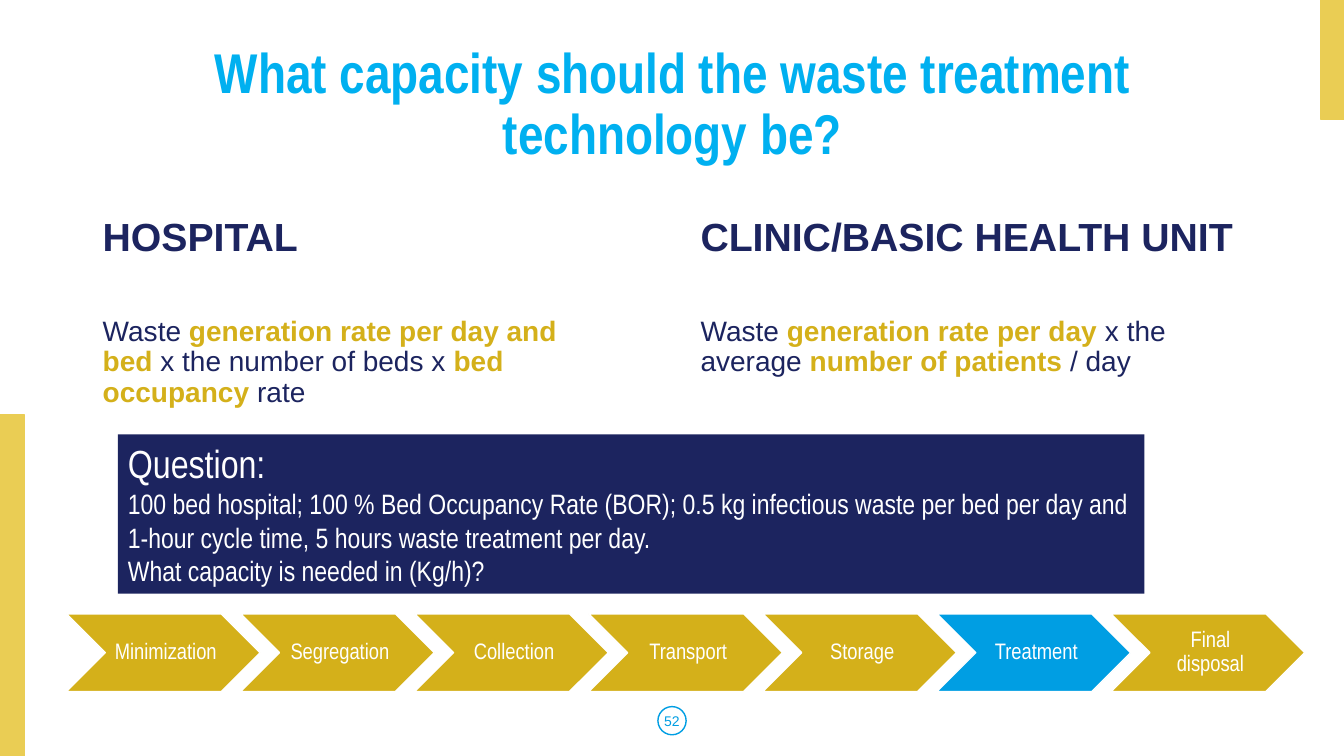
from pptx import Presentation
from pptx.dml.color import RGBColor
from pptx.enum.shapes import MSO_SHAPE
from pptx.enum.text import MSO_ANCHOR, PP_ALIGN
from pptx.util import Inches, Pt

COLORS = {
    "navy": "1C245F",
    "gold": "D4B01A",
    "pale_gold": "EACD54",
    "blue": "009EE3",
    "title_blue": "00B0F0",
    "white": "FFFFFF",
}
STEPS = ["Minimization", "Segregation", "Collection", "Transport",
         "Storage", "Treatment", "Final disposal"]
CURRENT_STEP = "Treatment"

# Each rule is a list of (text, emphasised) pieces
HOSPITAL_RULE = [
    ("Waste ", False), ("generation rate per day and bed ", True),
    ("x the number of beds x ", False), ("bed occupancy ", True), ("rate", False),
]
CLINIC_RULE = [
    ("Waste ", False), ("generation rate per day ", True),
    ("x the average ", False), ("number of patients ", True), ("/ day", False),
]
QUESTION_LINES = [
    ("Question:", 28),
    ("100 bed hospital; 100 % Bed Occupancy Rate (BOR); "
     "0.5 kg infectious waste per bed per day and", 20),
    ("1-hour cycle time, 5 hours waste treatment per day.", 20),
    ("What capacity is needed in (Kg/h)?", 20),
]


def color(name):
    return RGBColor.from_string(COLORS[name])


def add_run(paragraph, text, size, color_name, font="Arial Narrow", bold=False):
    run = paragraph.add_run()
    run.text = text
    run.font.name = font
    run.font.size = Pt(size)
    run.font.bold = bold
    run.font.color.rgb = color(color_name)


def add_box(slide, kind, box, fill=None, line=None):
    shape = slide.shapes.add_shape(kind, *map(Inches, box))
    shape.shadow.inherit = False
    if fill:
        shape.fill.solid()
        shape.fill.fore_color.rgb = color(fill)
    else:
        shape.fill.background()
    if line:
        shape.line.color.rgb = color(line)
        shape.line.width = Pt(1)
    else:
        shape.line.fill.background()
    return shape


def add_text_frame(slide, box, anchor=MSO_ANCHOR.TOP):
    frame = slide.shapes.add_textbox(*map(Inches, box)).text_frame
    frame.word_wrap = True
    frame.vertical_anchor = anchor
    return frame


def add_edge_bars(slide):
    for box in [(0, 4.11, 0.24, 3.39), (13.1, 0, 0.24, 1.18)]:
        add_box(slide, MSO_SHAPE.RECTANGLE, box, "pale_gold", "pale_gold")


def add_page_number(slide, box, number):
    left, top, width, height = box
    diameter = 0.28
    circle = (left + (width - diameter) / 2, top + (height - diameter) / 2,
              diameter, diameter)
    add_box(slide, MSO_SHAPE.OVAL, circle, line="blue")
    paragraph = add_text_frame(slide, box, MSO_ANCHOR.MIDDLE).paragraphs[0]
    paragraph.alignment = PP_ALIGN.CENTER
    add_run(paragraph, number, 10, "blue", "Arial")


def add_process(slide, box):
    left, top, width, height = box
    chevron_width, label_width = 1.92, 1.15
    pitch = (width - chevron_width) / (len(STEPS) - 1)
    for index, step in enumerate(STEPS):
        x = left + index * pitch
        fill = "blue" if step == CURRENT_STEP else "gold"
        add_box(slide, MSO_SHAPE.CHEVRON, (x, top, chevron_width, height), fill, "white")
        label_left = x + (chevron_width - label_width) / 2
        frame = add_text_frame(slide, (label_left, top, label_width, height),
                               MSO_ANCHOR.MIDDLE)
        frame.margin_left = Inches(0.07)
        frame.margin_top = frame.margin_right = frame.margin_bottom = Inches(0.02)
        paragraph = frame.paragraphs[0]
        paragraph.alignment = PP_ALIGN.CENTER
        paragraph.line_spacing = 0.9
        add_run(paragraph, step, 16, "white")


def add_title(slide, box, text):
    paragraph = add_text_frame(slide, box).paragraphs[0]
    paragraph.alignment = PP_ALIGN.CENTER
    paragraph.line_spacing = 0.9
    add_run(paragraph, text, 40, "title_blue", bold=True)


def add_column(slide, box, heading, rule):
    frame = add_text_frame(slide, box)
    heading_paragraph = frame.paragraphs[0]
    heading_paragraph.line_spacing = 0.9
    add_run(heading_paragraph, heading, 28, "navy", "Arial", True)
    rule_paragraph = frame.add_paragraph()
    rule_paragraph.line_spacing = 0.9
    rule_paragraph.space_before = Pt(41)
    for text, emphasised in rule:
        add_run(rule_paragraph, text, 20, "gold" if emphasised else "navy",
                "Arial", emphasised)


def add_question(slide, box):
    frame = add_box(slide, MSO_SHAPE.RECTANGLE, box, "navy").text_frame
    frame.word_wrap = True
    frame.vertical_anchor = MSO_ANCHOR.TOP
    for index, (text, size) in enumerate(QUESTION_LINES):
        paragraph = frame.add_paragraph() if index else frame.paragraphs[0]
        paragraph.alignment = PP_ALIGN.LEFT
        add_run(paragraph, text, size, "white")


def main():
    presentation = Presentation()
    presentation.slide_width = Inches(13.33)
    presentation.slide_height = Inches(7.5)
    slide = presentation.slides.add_slide(presentation.slide_layouts[6])

    # Frame of the slide
    add_edge_bars(slide)
    add_page_number(slide, (0, 6.95, 13.33, 0.4), "52")

    # Waste management chain
    add_process(slide, (0.66, 6.09, 12.28, 0.77))

    # Title and the two calculation rules
    add_title(slide, (0.92, 0.4, 11.5, 0.78),
              "What capacity should the waste treatment technology be?")
    add_column(slide, (0.92, 2.11, 5.08, 4.85), "HOSPITAL", HOSPITAL_RULE)
    add_column(slide, (6.85, 2.11, 5.57, 4.85), "CLINIC/BASIC HEALTH UNIT", CLINIC_RULE)

    # Exercise
    add_question(slide, (1.17, 4.31, 10.18, 1.58))

    presentation.save("out.pptx")


if __name__ == "__main__":
    main()
